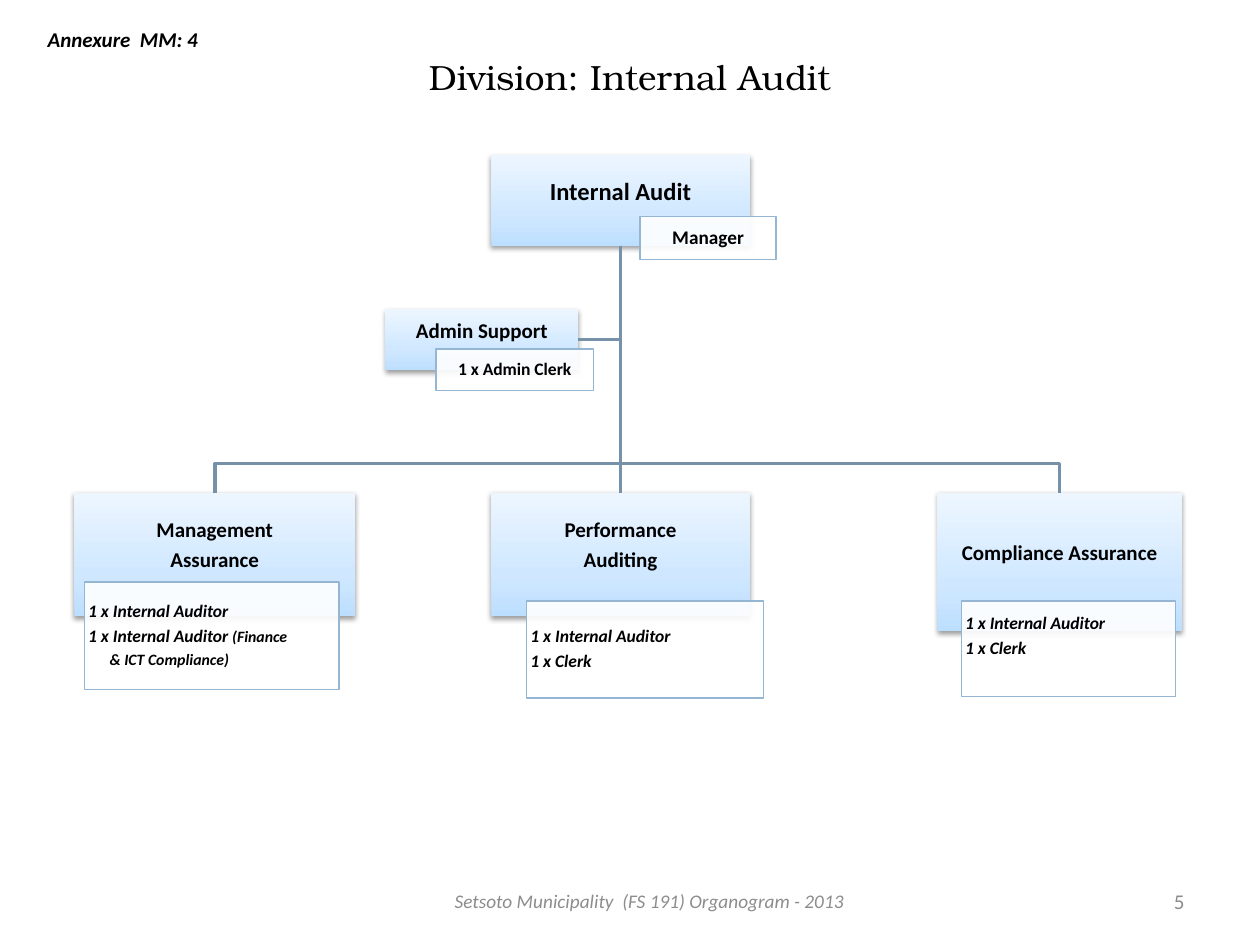
from pptx import Presentation
from pptx.dml.color import RGBColor
from pptx.enum.shapes import MSO_CONNECTOR, MSO_SHAPE
from pptx.enum.text import MSO_ANCHOR, PP_ALIGN
from pptx.oxml import parse_xml
from pptx.oxml.ns import nsdecls
from pptx.util import Inches, Pt
from lxml.etree import SubElement
from copy import deepcopy

LEFT, MID, RIGHT = PP_ALIGN.LEFT, PP_ALIGN.CENTER, PP_ALIGN.RIGHT


def color(code):
    return RGBColor.from_string(code)


class Chart:
    font = "Calibri"
    ink = "000000"
    wire = "7792A8"
    edge = "94B6D2"
    shades = [(0, "BDDFFF"), (0.35, "D0E8FF"), (1, "EDF6FF")]

    def __init__(self, slide):
        self.slide = slide

    def words(self, shape, lines, size, align, bold=False, italic=False,
              ink=None, font=None, anchor=MSO_ANCHOR.MIDDLE, pad=None, tight=False):
        frame = shape.text_frame
        frame.word_wrap = True
        frame.vertical_anchor = anchor
        if pad:
            (frame.margin_left, frame.margin_top,
             frame.margin_right, frame.margin_bottom) = map(Inches, pad)
        for row, line in enumerate(lines):
            para = frame.paragraphs[0] if row == 0 else frame.add_paragraph()
            para.alignment = align
            if tight:
                para.line_spacing = 0.9
                para.space_after = Pt(0.35 * size)
            parts = [(line, size)] if isinstance(line, str) else line
            for text, points in parts:
                run = para.add_run()
                run.text = text
                if len(parts) > 1:
                    run.font.size = Pt(points)
            style = para.font
            style.name = font or self.font
            style.size = Pt(parts[0][1])
            style.bold = bold
            style.italic = italic
            style.color.rgb = color(ink or self.ink)
        return frame

    def label(self, box, text, size, align=MID, **style):
        shape = self.slide.shapes.add_textbox(*map(Inches, box))
        self.words(shape, [text], size, align, **style)

    def rect(self, box):
        shape = self.slide.shapes.add_shape(MSO_SHAPE.RECTANGLE, *map(Inches, box))
        shape.shadow.inherit = False
        return shape

    def card(self, box, lines, size=12):
        shape = self.rect(box)
        shape.line.fill.background()
        fill = shape.fill
        fill.gradient()
        fill.gradient_angle = 90
        stops = shape._element.spPr.find(".//{*}gsLst")
        stops.append(deepcopy(stops[-1]))
        for stop, (place, code) in zip(fill.gradient_stops, self.shades):
            stop.position = place
            stop.color.rgb = color(code)
        glow = shape._element.spPr.find("{*}effectLst")
        glow.append(parse_xml(
            f'<a:outerShdw {nsdecls("a")} blurRad="{Pt(3.1)}" dist="{Pt(1.6)}" '
            'dir="5400000" rotWithShape="0"><a:srgbClr val="000000">'
            '<a:alpha val="38000"/></a:srgbClr></a:outerShdw>'))
        self.words(shape, lines, size, MID, bold=True, tight=True,
                   pad=(0.01, 0.01, 0.01, 0.14))
        return shape

    def note(self, box, lines, size=10, align=LEFT, base=0.01):
        shape = self.rect(box)
        shape.fill.solid()
        shape.fill.fore_color.rgb = color("FFFFFF")
        tone = shape._element.spPr.find("{*}solidFill")[0]
        SubElement(tone, tone.tag.replace("srgbClr", "alpha"), val="90000")
        shape.line.color.rgb = color(self.edge)
        shape.line.width = Pt(0.75)
        return self.words(shape, lines, size, align, bold=True, tight=True,
                          italic=align == LEFT, pad=(0.03, 0.01, 0.03, base))

    def join(self, start, side, end=None, stop=(0, 0)):
        line = self.slide.shapes.add_connector(MSO_CONNECTOR.STRAIGHT, 0, 0, *stop)
        line.begin_connect(start, side)
        if end is not None:
            line.end_connect(end, 0)
        line.line.color.rgb = color(self.wire)
        line.line.width = Pt(2)
        spot = line._element.spPr
        spot.append(parse_xml(f'<a:effectLst {nsdecls("a")}/>'))

    def branch(self, root, leaf, bus):
        start = root.left + root.width // 2
        end = leaf.left + leaf.width // 2
        route = self.slide.shapes.build_freeform(start, root.top + root.height)
        route.add_line_segments([(start, bus), (end, bus), (end, leaf.top)], close=False)
        shape = route.convert_to_shape()
        shape.shadow.inherit = False
        shape.fill.background()
        shape.line.color.rgb = color(self.wire)
        shape.line.width = Pt(2)


def main():
    deck = Presentation()
    deck.slide_width, deck.slide_height = Inches(10), Inches(7.5)
    chart = Chart(deck.slides.add_slide(deck.slide_layouts[6]))

    chart.label((0.5, 0.3, 9, 0.61), "Division: Internal Audit", 20, font="TeX Gyre Bonum")
    chart.label((0.28, 0.16, 1.97, 0.3), "Annexure  MM: 4", 12, LEFT,
                bold=True, italic=True, anchor=MSO_ANCHOR.TOP)

    top = 3.91
    root = chart.card((3.9, 1.23, 2.05, 0.72), ["Internal Audit"], 14)
    admin = chart.card((3.06, 2.45, 1.53, 0.49), ["Admin Support"])
    first = chart.card((0.59, top, 2.23, 0.98), ["Management", "Assurance"])
    second = chart.card((3.9, top, 2.05, 0.98), ["Performance", "Auditing"])
    third = chart.card((7.44, top, 1.94, 1.1), ["Compliance Assurance"])

    for leaf in (first, third):
        chart.branch(root, leaf, Inches(3.68))
    chart.join(root, 2, second)
    chart.join(admin, 3, stop=(root.left + root.width // 2, admin.top + admin.height // 2))

    auditor, clerk = "1 x Internal Auditor", "1 x Clerk"
    chart.note((5.08, 1.72, 1.08, 0.34), ["Manager"], 11, MID)
    chart.note((3.46, 2.77, 1.25, 0.33), ["1 x Admin Clerk"], align=MID)
    frame = chart.note((0.67, 4.62, 2.02, 0.85), [
        auditor, [(auditor + " ", 10), ("(Finance", 9)], [("& ICT Compliance)", 9)]])
    frame.paragraphs[2]._p.get_or_add_pPr().set("marL", str(Inches(0.17)))
    chart.note((4.18, 4.77, 1.88, 0.77), [auditor, clerk])
    chart.note((7.63, 4.77, 1.7, 0.76), [auditor, clerk], base=0.21)

    gray = "8C8C8C"
    chart.label((3.42, 6.95, 3.47, 0.4), "Setsoto Municipality  (FS 191) Organogram - 2013",
                11, italic=True, ink=gray)
    chart.label((7.17, 6.95, 2.33, 0.4), "5", 12, RIGHT, ink=gray)
    deck.save("out.pptx")


if __name__ == "__main__":
    main()
